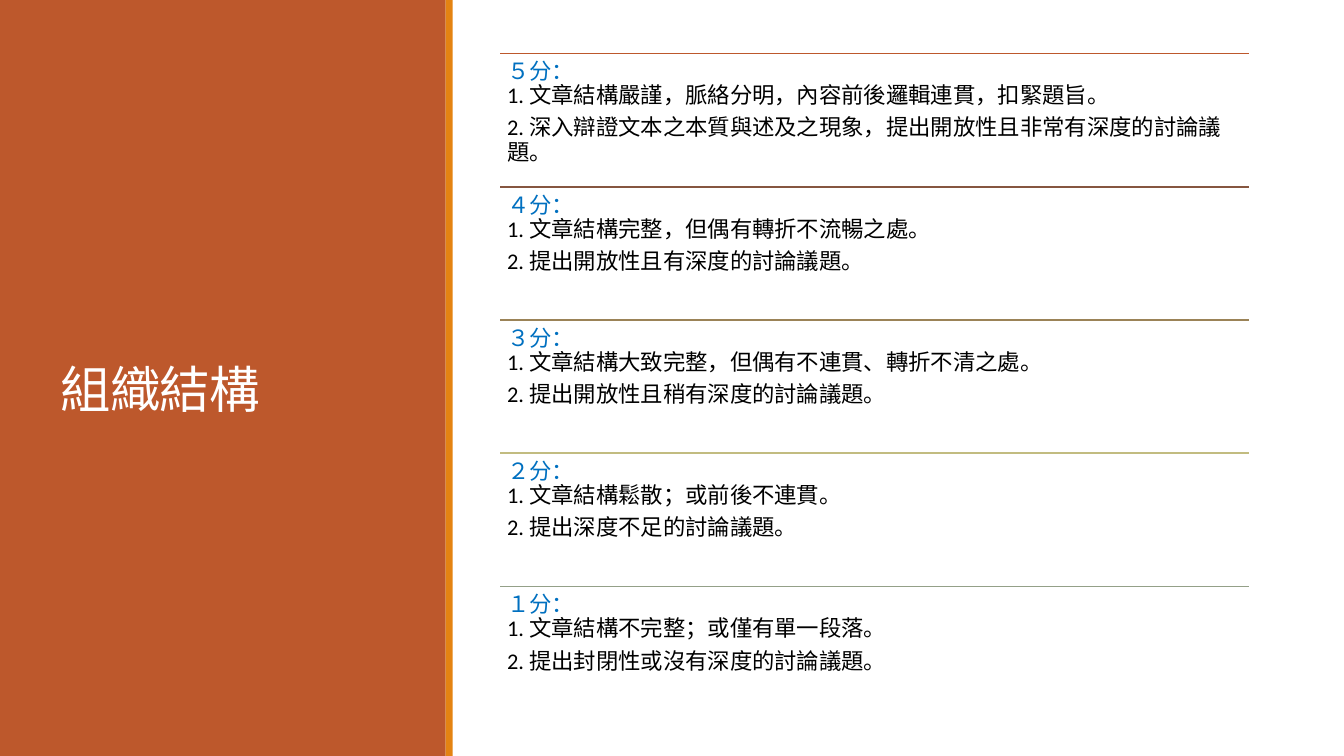
from copy import deepcopy
from dataclasses import dataclass

from lxml import etree
from pptx import Presentation
from pptx.dml.color import RGBColor
from pptx.enum import shapes, text
from pptx.oxml import ns
from pptx.util import Inches, Pt


@dataclass(frozen=True)
class Theme:
    panel: str = "BD582C"
    stripe: str = "E48312"
    title: str = "FFFFFF"
    score: str = "0070C0"
    body: str = "000000"
    latin: str = "Calibri"
    cjk: str = "Noto Sans CJK SC"
    head_size: int = 36
    body_size: int = 16


THEME = Theme()

LEVELS = [
    ("５分：", "BD582C", "1. 文章結構嚴謹，脈絡分明，內容前後邏輯連貫，扣緊題旨。",
     "2. 深入辯證文本之本質與述及之現象，提出開放性且非常有深度的討論議題。"),
    ("４分：", "865640", "1. 文章結構完整，但偶有轉折不流暢之處。",
     "2. 提出開放性且有深度的討論議題。"),
    ("３分：", "9B8357", "1. 文章結構大致完整，但偶有不連貫、轉折不清之處。",
     "2. 提出開放性且稍有深度的討論議題。"),
    ("２分：", "C2BC80", "1. 文章結構鬆散；或前後不連貫。",
     "2. 提出深度不足的討論議題。"),
    ("１分：", "94A088", "1. 文章結構不完整；或僅有單一段落。",
     "2. 提出封閉性或沒有深度的討論議題。"),
]


def style(run, size, color, latin):
    """Format a run, with the theme's CJK face for East Asian letters."""
    run.font.size = Pt(size)
    run.font.color.rgb = RGBColor.from_string(color)
    run.font.name = latin
    props = run.font._element
    etree.SubElement(props, ns.qn("a:ea")).set("typeface", THEME.cjk)
    return props


def add_band(slide, left, top, width, height, color):
    band = slide.shapes.add_shape(
        shapes.MSO_SHAPE.RECTANGLE,
        Inches(left), Inches(top), Inches(width), Inches(height))
    band.shadow.inherit = False
    band.fill.solid()
    band.fill.fore_color.rgb = RGBColor.from_string(color)
    band.line.fill.background()


def add_panel(slide, left, top, width, height):
    """Draw the coloured side panel and set the title in front of it."""
    stripe = 0.07
    add_band(slide, left, top, width - stripe, height, THEME.panel)
    add_band(slide, left + width - stripe, top, stripe, height, THEME.stripe)

    title = slide.shapes.title
    title.left, title.top = Inches(left + 0.5), Inches(top + 0.65)
    title.width, title.height = Inches(3.5), Inches(6.49)
    frame = title.text_frame
    frame.text = "組織結構"
    frame.word_wrap = True
    frame.auto_size = text.MSO_AUTO_SIZE.NONE
    frame.vertical_anchor = text.MSO_ANCHOR.MIDDLE
    para = frame.paragraphs[0]
    para.alignment = text.PP_ALIGN.LEFT
    para.line_spacing = 0.85
    props = style(para.runs[0], THEME.head_size, THEME.title, THEME.cjk)
    props.set("spc", "-50")
    title._element.getparent().append(title._element)


def add_rule(slide, left, top, width, color):
    rule = slide.shapes.add_connector(
        shapes.MSO_CONNECTOR.STRAIGHT,
        Inches(left), Inches(top), Inches(left + width), Inches(top))
    rule.line.color.rgb = RGBColor.from_string(color)
    rule.line.width = Pt(1.25)
    etree.SubElement(rule._element.spPr, ns.qn("a:effectLst"))


def add_level(slide, left, top, width, height, level):
    score, color, first, second = level
    add_rule(slide, left, top, width, color)
    box = slide.shapes.add_textbox(
        Inches(left), Inches(top), Inches(width), Inches(height))
    frame = box.text_frame
    frame.word_wrap = True
    frame.margin_left = frame.margin_right = Inches(0.07)
    frame.margin_top = frame.margin_bottom = Inches(0.07)

    lead, rest = frame.paragraphs[0], frame.add_paragraph()
    lead.text = f"{score}\v{first}"
    rest.text = second
    for para in (lead, rest):
        para.line_spacing = 0.9
        para.space_after = Pt(0.35 * THEME.body_size)
    head, item = lead.runs
    props = style(head, THEME.body_size, THEME.score, THEME.cjk)
    lead._p.find(ns.qn("a:br")).append(deepcopy(props))
    for run in (item, *rest.runs):
        style(run, THEME.body_size, THEME.body, THEME.latin)


def add_levels(slide, left, top, width, height):
    """Stack the score levels in equal rows."""
    row = height / len(LEVELS)
    for i, level in enumerate(LEVELS):
        add_level(slide, left, top + i * row, width, row, level)


def main():
    deck = Presentation()
    deck.slide_width, deck.slide_height = Inches(13.33), Inches(7.5)
    slide = deck.slides.add_slide(deck.slide_layouts.get_by_name("Title Only"))
    add_panel(slide, 0, 0, 4.49, 7.5)
    add_levels(slide, 4.96, 0.53, 7.43, 6.61)
    deck.save("out.pptx")


if __name__ == "__main__":
    main()
